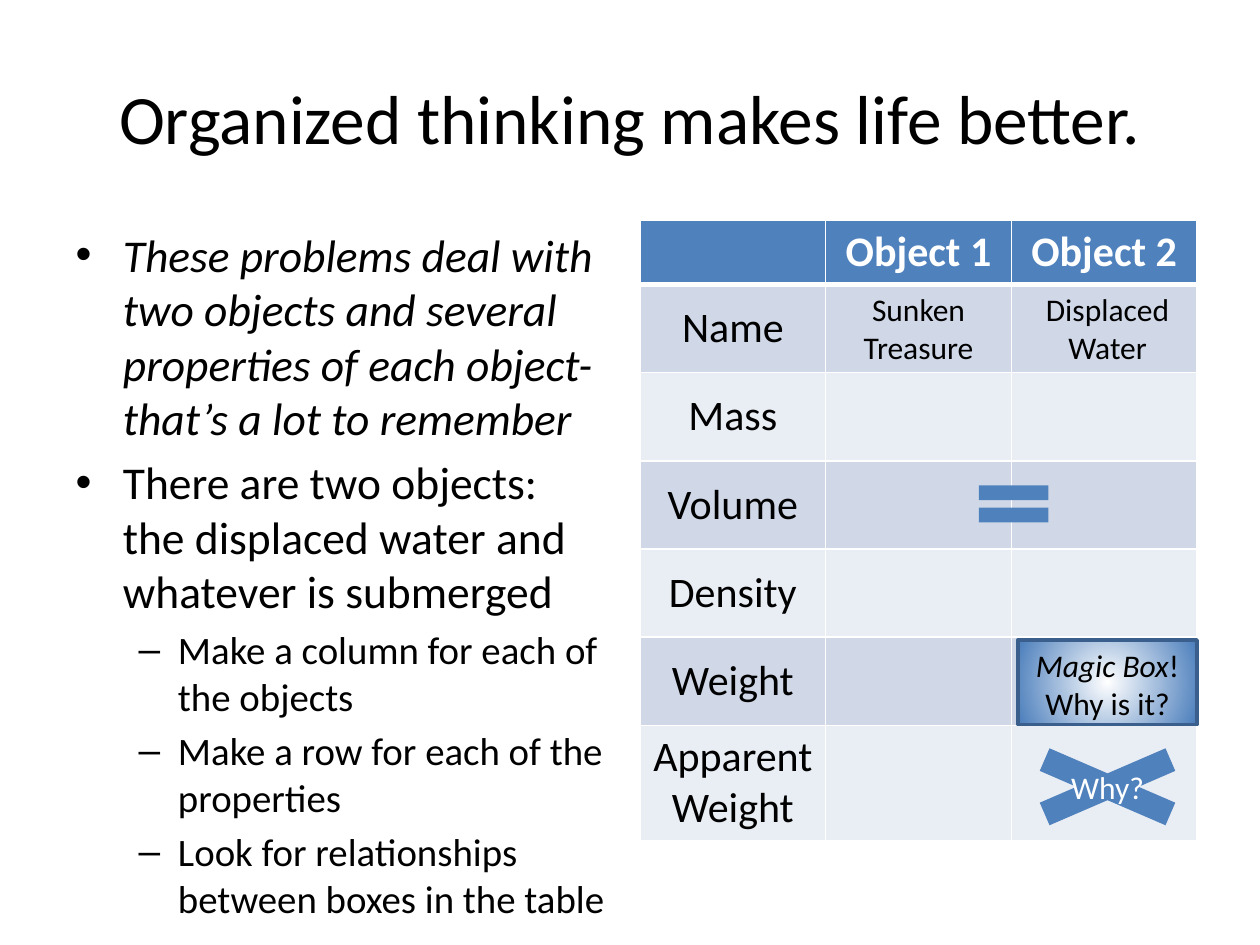
from lxml.etree import SubElement
from pptx import Presentation
from pptx.dml.color import RGBColor
from pptx.enum.shapes import MSO_SHAPE
from pptx.enum.text import MSO_ANCHOR, MSO_AUTO_SIZE, PP_ALIGN
from pptx.oxml import parse_xml
from pptx.oxml.ns import nsdecls, qn
from pptx.util import Inches, Pt

COLORS = {"blue": "4F81BD", "edge": "3A5F8C", "dark": "D0D8E8",
          "light": "E9EDF4", "white": "FFFFFF", "black": "000000"}
FONT = "Calibri"
BULLETS = [
    (0, "These problems deal with two objects and several properties of "
        "each object- that’s a lot to remember"),
    (0, "There are two objects: the displaced water and whatever is submerged"),
    (1, "Make a column for each of the objects"),
    (1, "Make a row for each of the properties"),
    (1, "Look for relationships between boxes in the table"),
]
HEADS = ["", "Object 1", "Object 2"]
LABELS = ["Name", "Mass", "Volume", "Density", "Weight", "Apparent Weight"]
HEIGHTS = [0.5] + [0.7] * 5 + [0.91]


def color(name):
    return RGBColor.from_string(COLORS[name])


def place(shape, left, top, width, height):
    shape.left, shape.top = Inches(left), Inches(top)
    shape.width, shape.height = Inches(width), Inches(height)


def style(para, size, name="black", align=None):
    para.font.name, para.font.size = FONT, Pt(size)
    para.font.color.rgb = color(name)
    para.alignment = align


def add_title(slide, text):
    title = slide.shapes.title
    place(title, 0.5, 0.3, 9, 1.25)
    frame = title.text_frame
    frame.text = text
    frame.auto_size = MSO_AUTO_SIZE.NONE
    frame.vertical_anchor = MSO_ANCHOR.MIDDLE
    style(frame.paragraphs[0], 39.6, align=PP_ALIGN.CENTER)


def add_list(slide):
    body = slide.placeholders[1]
    place(body, 0.5, 1.75, 4.42, 4.95)
    frame = body.text_frame
    frame.auto_size = MSO_AUTO_SIZE.NONE
    frame.text = "\n".join(text for _, text in BULLETS)
    for para, (level, _) in zip(frame.paragraphs, BULLETS):
        para.level = level
        style(para, 22.2 if level else 26)
    frame.paragraphs[0].font.italic = True


def add_edge(cell, side, width):
    line = SubElement(cell._tc.get_or_add_tcPr(), qn(f"a:ln{side}"),
                      w=str(Pt(width)))
    fill = SubElement(line, qn("a:solidFill"))
    SubElement(fill, qn("a:srgbClr"), val=COLORS["white"])


def fill_cell(cell, text, row):
    thick = {("B", 0): 3, ("T", 1): 3}
    for side in "LRTB":
        add_edge(cell, side, thick.get((side, row), 1))
    cell.fill.solid()
    cell.fill.fore_color.rgb = color(
        "blue" if row == 0 else "dark" if row % 2 else "light")
    cell.vertical_anchor = MSO_ANCHOR.MIDDLE
    cell.text = text
    para = cell.text_frame.paragraphs[0]
    style(para, 24, "black" if row else "white", PP_ALIGN.CENTER)
    para.font.bold = row == 0


def add_grid(slide):
    rows = [HEADS] + [[label, "", ""] for label in LABELS]
    table = slide.shapes.add_table(
        len(rows), len(HEADS), Inches(5.08), Inches(1.75),
        Inches(4.42), Inches(sum(HEIGHTS))).table
    for row, (texts, height) in enumerate(zip(rows, HEIGHTS)):
        table.rows[row].height = Inches(height)
        for col, text in enumerate(texts):
            fill_cell(table.cell(row, col), text, row)


def add_note(slide, left, top, *lines):
    box = slide.shapes.add_textbox(Inches(left), Inches(top),
                                   Inches(1.42), Inches(0.71))
    frame = box.text_frame
    frame.word_wrap = True
    frame.auto_size = MSO_AUTO_SIZE.SHAPE_TO_FIT_TEXT
    frame.text = "\n".join(lines)
    for para in frame.paragraphs:
        style(para, 18, align=PP_ALIGN.CENTER)
    return frame


def add_mark(slide, kind, left, top, width, height):
    mark = slide.shapes.add_shape(kind, Inches(left), Inches(top),
                                  Inches(width), Inches(height))
    mark.shadow.inherit = False
    mark.fill.solid()
    mark.fill.fore_color.rgb = color("blue")
    mark.line.fill.background()
    return mark


def add_glow(shape):
    """Fill from a white centre to blue edges."""
    glow = parse_xml(
        f'<a:gradFill {nsdecls("a")} rotWithShape="1"><a:gsLst>'
        f'<a:gs pos="0"><a:srgbClr val="{COLORS["white"]}"/></a:gs>'
        f'<a:gs pos="97000"><a:srgbClr val="{COLORS["blue"]}"/></a:gs>'
        '</a:gsLst><a:path path="circle"><a:fillToRect l="50000" t="50000" '
        'r="50000" b="50000"/></a:path></a:gradFill>')
    props = shape._element.spPr
    props.replace(props.find(qn("a:solidFill")), glow)


def main():
    deck = Presentation()
    deck.slide_width, deck.slide_height = Inches(10), Inches(7.5)
    slide = deck.slides.add_slide(deck.slide_layouts[1])

    # Title, list and table
    add_title(slide, "Organized thinking makes life better.")
    add_list(slide)
    add_grid(slide)

    # Names of the two objects
    add_note(slide, 6.58, 2.25, "Sunken Treasure")
    add_note(slide, 8.08, 2.25, "Displaced Water")

    # Equal volumes
    add_mark(slide, MSO_SHAPE.MATH_EQUAL, 7.67, 3.75, 0.75, 0.5)

    # Magic box
    magic = add_mark(slide, MSO_SHAPE.RECTANGLE, 8.08, 5.08, 1.42, 0.67)
    add_glow(magic)
    magic.line.color.rgb = color("edge")
    magic.line.width = Pt(2)
    note = add_note(slide, 8.08, 5.08, "Magic Box", "Why is it?")
    first = note.paragraphs[0]
    first.runs[0].font.italic = True
    first.add_run().text = "!"

    # Crossed-out apparent weight
    cross = add_mark(slide, MSO_SHAPE.MATH_MULTIPLY, 7.83, 5.83, 1.92, 0.83)
    cross.text_frame.text = "Why?"
    cross.text_frame.vertical_anchor = MSO_ANCHOR.MIDDLE
    style(cross.text_frame.paragraphs[0], 18, "white", PP_ALIGN.CENTER)

    deck.save("out.pptx")


if __name__ == "__main__":
    main()
